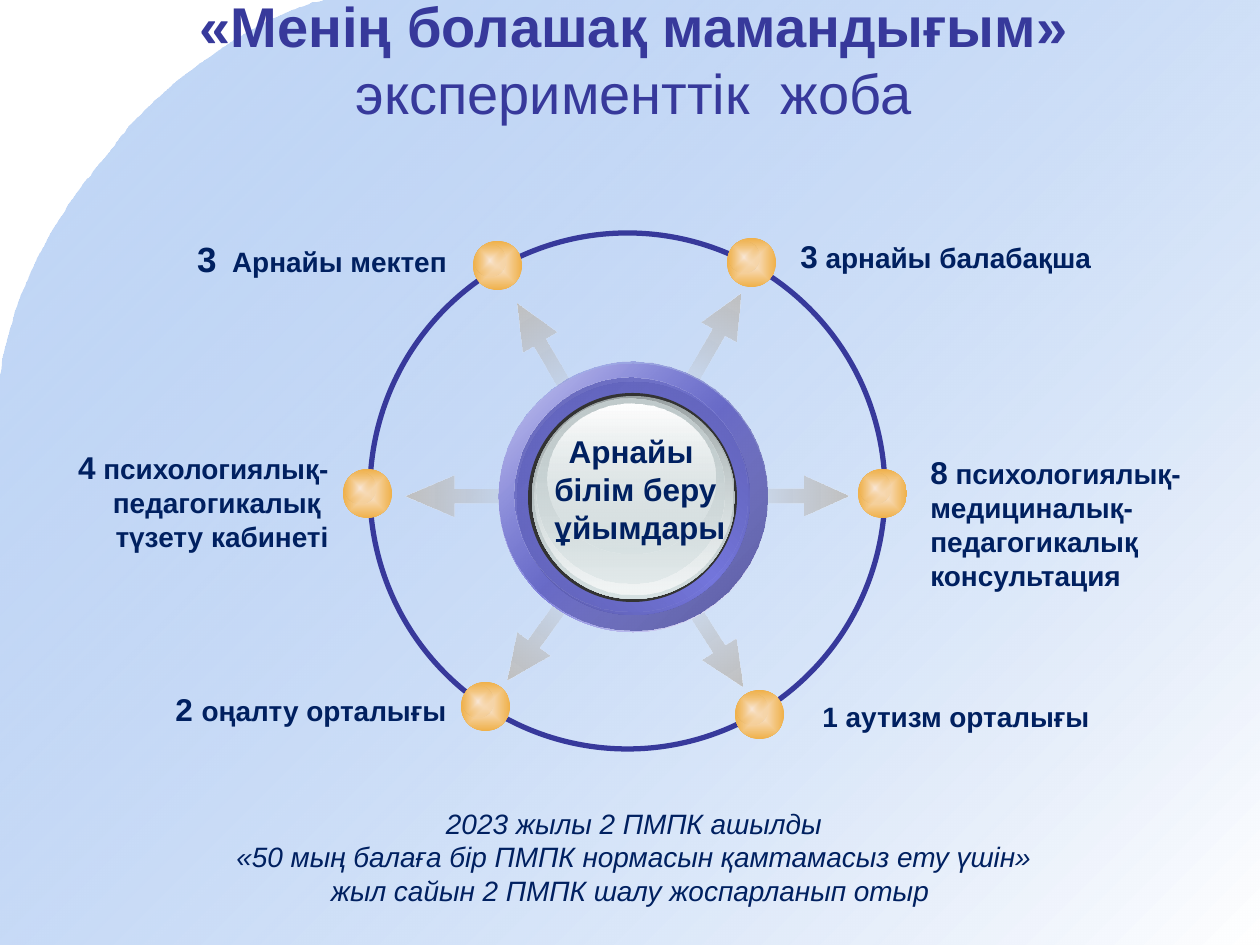
from dataclasses import dataclass

from pptx import Presentation
from pptx.dml.color import RGBColor
from pptx.enum.shapes import MSO_SHAPE
from pptx.enum.text import MSO_ANCHOR, MSO_AUTO_SIZE, PP_ALIGN
from pptx.oxml import parse_xml
from pptx.oxml.ns import nsdecls, qn
from pptx.util import Emu, Pt

EMU_PER_PX = 914400 / 126
LEFT, CENTER, RIGHT = PP_ALIGN.LEFT, PP_ALIGN.CENTER, PP_ALIGN.RIGHT


@dataclass(frozen=True)
class Theme:
    font: str = "Arial"
    accent: str = "37399B"
    ink: str = "002060"
    rim: str = "333333"
    title: int = 32
    large: int = 20
    medium: int = 18
    body: int = 16
    # Gradient stops: position, colour, opacity in percent
    backdrop: tuple = ((0, "699DE9", 39), (100, "FFFFFF", 100))
    arrow: tuple = ((0, "B7B7B7", 0), (100, "C0C0C0", 100))
    dot: tuple = ((0, "FAE8D8", 100), (100, "EFB049", 100))
    dot_glow: tuple = ((0, "FAE8D8", 100), (100, "EFB049", 0))
    halo: tuple = ((0, "FFFFFF", 100), (50, "7476DC", 100), (100, "FFFFFF", 100))
    bezel: tuple = ((0, "7476DC", 32), (100, "53549D", 100))
    groove: tuple = ((0, "595AA8", 100), (50, "7476DC", 100), (100, "595AA8", 100))
    groove_face: tuple = ((0, "5F61B5", 100), (100, "7476DC", 0))
    glass_edge: tuple = ((0, "99A1A2", 100), (100, "D6E1E2", 100))
    glass: tuple = ((0, "D6E1E2", 0), (100, "F2F5F5", 100))
    glass_shade: tuple = ((0, "C1CBCC", 100), (100, "D6E1E2", 48))
    glass_shine: tuple = ((0, "FFFFFF", 100), (100, "D6E1E2", 38))


def px(value):
    return Emu(round(value * EMU_PER_PX))


def curve(start, first, second, end, steps=40):
    """Points along a cubic curve, without its start."""
    for step in range(1, steps + 1):
        t = step / steps
        weights = ((1 - t) ** 3, 3 * t * (1 - t) ** 2, 3 * t * t * (1 - t), t ** 3)
        corners = (start, first, second, end)
        yield tuple(sum(w * c[axis] for w, c in zip(weights, corners)) for axis in (0, 1))


class SlideBuilder:
    def __init__(self, slide, theme):
        self.slide = slide
        self.theme = theme

    def gradient(self, shape, stops, angle=None):
        """Fill along an angle, or from the centre when there is none."""
        marks = "".join(
            f'<a:gs pos="{position * 1000}"><a:srgbClr val="{color}">'
            f'<a:alpha val="{opacity * 1000}"/></a:srgbClr></a:gs>'
            for position, color, opacity in stops)
        if angle is None:
            course = ('<a:path path="shape"><a:fillToRect l="50000" t="50000" '
                      'r="50000" b="50000"/></a:path>')
        else:
            course = f'<a:lin ang="{angle * 60000}" scaled="1"/>'
        shape.fill.background()
        properties = shape._element.spPr
        properties.replace(properties.find(qn("a:noFill")), parse_xml(
            f'<a:gradFill {nsdecls("a")} rotWithShape="1"><a:gsLst>{marks}</a:gsLst>'
            f'{course}</a:gradFill>'))

    def shape(self, kind, left, top, width, height):
        shape = self.slide.shapes.add_shape(kind, px(left), px(top), px(width), px(height))
        shape.shadow.inherit = False
        shape.fill.background()
        shape.line.fill.background()
        return shape

    def backdrop(self):
        shoulder, middle, foot = (325, 0), (123, 135), (0, 379)
        edge = [*curve(shoulder, (239, 20), (146, 105), middle),
                *curve(middle, (101, 166), (20, 244), foot)]
        outline = self.slide.shapes.build_freeform(*shoulder, scale=EMU_PER_PX)
        outline.add_line_segments([*edge, (0, 945), (1260, 945), (1260, 0)], close=True)
        shape = outline.convert_to_shape()
        shape.shadow.inherit = False
        shape.line.fill.background()
        self.gradient(shape, self.theme.backdrop, 45)
        self.slide.shapes._spTree.insert(2, shape._element)  # behind the title

    def arrow(self, left, top, width, rotation, head):
        arrow = self.shape(MSO_SHAPE.RIGHT_ARROW, left, top, width, 40)
        arrow.rotation = rotation
        arrow.adjustments[0], arrow.adjustments[1] = 0.35, head
        self.gradient(arrow, self.theme.arrow, 0)

    def ring(self, *frame):
        ring = self.shape(MSO_SHAPE.OVAL, *frame)
        ring.line.color.rgb = RGBColor.from_string(self.theme.accent)
        ring.line.width = Pt(3)

    def disc(self, frame, fill, angle=None):
        disc = self.shape(MSO_SHAPE.OVAL, *frame)
        if isinstance(fill, str):
            disc.fill.solid()
            disc.fill.fore_color.rgb = RGBColor.from_string(fill)
        else:
            self.gradient(disc, fill, angle)

    def dot(self, left, top):
        self.disc((left, top, 49, 49), self.theme.dot)
        self.disc((left + 2, top + 4, 30, 31), self.theme.dot_glow)

    def add_lines(self, frame, lines, align, color, **style):
        """Each line is a list of (text, size) runs, or (text, size, style)."""
        for index, line in enumerate(lines):
            para = frame.paragraphs[0] if index == 0 else frame.add_paragraph()
            para.alignment = align
            for text, size, *extra in line:
                span = para.add_run()
                span.text = text
                span.font.color.rgb = RGBColor.from_string(color)
                values = {"name": self.theme.font, "size": Pt(size), **style}
                for changes in extra:
                    values.update(changes)
                for name, value in values.items():
                    setattr(span.font, name, value)

    def title(self, frame, line):
        title = self.slide.shapes.title
        for name, value in zip(("left", "top", "width", "height"), frame):
            setattr(title, name, px(value))
        title.text_frame.auto_size = MSO_AUTO_SIZE.NONE
        title.text_frame.vertical_anchor = MSO_ANCHOR.MIDDLE
        self.add_lines(title.text_frame, [line], CENTER, self.theme.accent)

    def text(self, frame, lines, align, wrap=False, **style):
        box = self.slide.shapes.add_textbox(*map(px, frame))
        box.text_frame.word_wrap = wrap
        box.text_frame.auto_size = MSO_AUTO_SIZE.SHAPE_TO_FIT_TEXT
        self.add_lines(box.text_frame, lines, align, self.theme.ink, **style)


def main():
    theme = Theme()
    deck = Presentation()
    deck.slide_width, deck.slide_height = px(1260), px(945)
    page = SlideBuilder(deck.slides.add_slide(deck.slide_layouts[5]), theme)
    large, medium, body = theme.large, theme.medium, theme.body

    # Backdrop and title
    page.backdrop()
    page.title((67, 20, 1134, 78), [
        ("«Менің болашақ мамандығым» ", theme.title, {"bold": True}),
        ("эксперименттік  жоба", theme.title, {"bold": False})])

    # Arrows from the hub, then the ring with its dots
    for left, top, width, rotation, head in (
            (658, 321, 110, 299.6, 1.11), (658, 620, 110, 57.8, 1.11),
            (490, 331, 110, 239.5, 1.11), (485, 615, 110, 125.6, 1.11),
            (738, 476, 110, 0, 1.11), (406, 476, 118, 180, 1.21)):
        page.arrow(left, top, width, rotation, head)
    page.ring(370, 233, 515, 516)
    for left, top in ((473, 241), (343, 469), (461, 682),
                      (727, 238), (858, 469), (735, 690)):
        page.dot(left, top)

    # Hub, from the outer bezel to the shine on the glass
    for frame, fill, angle in (
            ((499, 364, 268, 268), theme.halo, 45),
            ((499, 362, 268, 268), theme.bezel, 45),
            ((517, 382, 233, 233), theme.groove, 315),
            ((514, 378, 233, 233), theme.groove_face, 45),
            ((528, 393, 209, 209), theme.rim, None),
            ((532, 396, 203, 203), theme.glass_edge, 90),
            ((534, 397, 198, 198), theme.glass, 90),
            ((537, 399, 188, 185), theme.glass_shade, 90),
            ((547, 404, 168, 150), theme.glass_shine, 90)):
        page.disc(frame, fill, angle)

    # Labels around the ring and inside the hub
    for frame, align, lines in (
            ((788, 231, 320, 50), LEFT, [[("3", medium), (" арнайы балабақша", body)]]),
            ((181, 231, 286, 55), RIGHT, [[("3", large), ("  Арнайы мектеп ", body)]]),
            ((918, 447, 278, 152), LEFT, [
                [("8", medium), (" психологиялық-", body)], [("медициналық-", body)],
                [("педагогикалық", body)], [("консультация", body)]]),
            ((810, 693, 296, 47), LEFT, [[("1 аутизм орталығы", body)]]),
            ((63, 442, 278, 118), RIGHT, [
                [("4", medium), (" психологиялық-", body)],
                [("педагогикалық ", body)], [("түзету кабинеті", body)]]),
            ((159, 684, 300, 50), RIGHT, [[("2 ", medium), ("оңалту орталығы", body)]]),
            ((532, 426, 207, 127), CENTER, [
                [("Арнайы ", medium)], [("білім беру", medium)], [(" ұйымдары", medium)]])):
        page.text(frame, lines, align, bold=True)

    # Closing note
    page.text((118, 800, 1032, 115), [
        [("2023 жылы 2 ПМПК ашылды", body)],
        [(" «50 мың балаға бір ПМПК нормасын қамтамасыз ету үшін» ", body)],
        [("жыл сайын 2 ПМПК шалу жоспарланып отыр ", body)]], CENTER, wrap=True, italic=True)

    deck.save("out.pptx")


if __name__ == "__main__":
    main()
